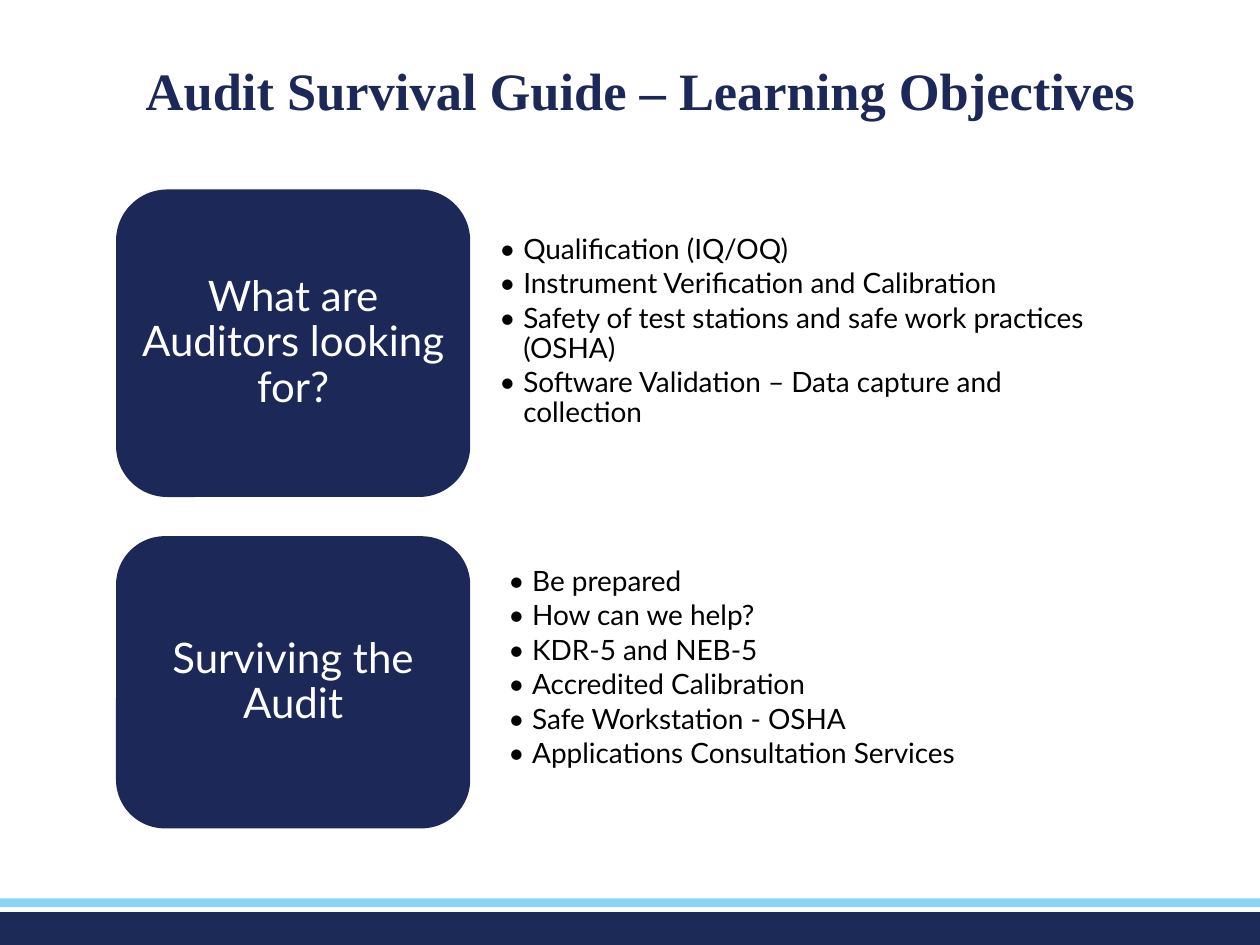
from dataclasses import dataclass

from lxml.etree import SubElement
from pptx import Presentation
from pptx.dml.color import RGBColor
from pptx.enum.shapes import MSO_SHAPE
from pptx.enum.text import MSO_ANCHOR, MSO_AUTO_SIZE, PP_ALIGN
from pptx.oxml.ns import qn
from pptx.util import Cm, Pt

NAVY = RGBColor(0x1C, 0x29, 0x58)
FOOTER_NAVY = RGBColor(0x1C, 0x2A, 0x58)
SKY = RGBColor(0x88, 0xD6, 0xF4)
WHITE = RGBColor(0xFF, 0xFF, 0xFF)
BLACK = RGBColor(0x00, 0x00, 0x00)

SLIDE_WIDTH, SLIDE_HEIGHT = 25.4, 19.05
CARD_LEFT, CARD_WIDTH = 2.34, 7.14
BULLET_INDENT = Cm(0.48)


@dataclass
class Box:
    """A rectangle in centimetres."""
    left: float
    top: float
    width: float
    height: float

    def lengths(self) -> tuple:
        return Cm(self.left), Cm(self.top), Cm(self.width), Cm(self.height)


@dataclass
class Topic:
    heading: str
    card: Box
    points: list[str]
    points_box: Box


TOPICS = [
    Topic(
        "What are Auditors looking for?",
        Box(CARD_LEFT, 3.82, CARD_WIDTH, 6.2),
        [
            "Qualification (IQ/OQ)",
            "Instrument Verification and Calibration",
            "Safety of test stations and safe work practices (OSHA)",
            "Software Validation – Data capture and collection",
        ],
        Box(9.77, 3.71, 12.98, 5.97),
    ),
    Topic(
        "Surviving the Audit",
        Box(CARD_LEFT, 10.81, CARD_WIDTH, 5.89),
        [
            "Be prepared",
            "How can we help?",
            "KDR-5 and NEB-5",
            "Accredited Calibration",
            "Safe Workstation - OSHA",
            "Applications Consultation Services",
        ],
        Box(9.95, 10.49, 13.18, 5.97),
    ),
]


def format_paragraph(paragraph, size: float, color: RGBColor, space_after: float = 0,
                     font_name: str = "Lato", bold: bool = False,
                     alignment=PP_ALIGN.CENTER) -> None:
    paragraph.alignment = alignment
    paragraph.line_spacing = 0.9
    paragraph.space_before = Pt(0)
    paragraph.space_after = Pt(space_after)
    font = paragraph.font
    font.name, font.size, font.bold = font_name, Pt(size), bold
    font.color.rgb = color


def set_frame(text_frame, left: float, other: float) -> None:
    text_frame.word_wrap = True
    text_frame.auto_size = MSO_AUTO_SIZE.NONE
    text_frame.vertical_anchor = MSO_ANCHOR.MIDDLE
    text_frame.margin_left = Cm(left)
    text_frame.margin_top = text_frame.margin_right = text_frame.margin_bottom = Cm(other)


def add_block(slide, preset, box: Box, color: RGBColor):
    shape = slide.shapes.add_shape(preset, *box.lengths())
    shape.shadow.inherit = False
    shape.fill.solid()
    shape.fill.fore_color.rgb = color
    shape.line.fill.background()
    return shape


def add_bullet(paragraph) -> None:
    properties = paragraph._p.get_or_add_pPr()
    properties.set("marL", str(BULLET_INDENT))
    properties.set("indent", str(-BULLET_INDENT))
    SubElement(properties, qn("a:buFont")).set("typeface", "Lato")
    SubElement(properties, qn("a:buChar")).set("char", "•")


def add_title(slide, text: str) -> None:
    title = slide.shapes.title
    title.left, title.top, title.width, title.height = Box(2.34, 0.84, 21.16, 2.11).lengths()
    set_frame(title.text_frame, 0.13, 0.13)
    title.text_frame.text = text
    format_paragraph(title.text_frame.paragraphs[0], 30, NAVY,
                     font_name="Times New Roman", bold=True)


def add_topic(slide, topic: Topic) -> None:
    # Heading card
    card = add_block(slide, MSO_SHAPE.ROUNDED_RECTANGLE, topic.card, NAVY)
    set_frame(card.text_frame, 0.05, 0.05)
    card.text_frame.text = topic.heading
    format_paragraph(card.text_frame.paragraphs[0], 24, WHITE, space_after=8.4)

    # Bulleted points beside it
    text_frame = slide.shapes.add_textbox(*topic.points_box.lengths()).text_frame
    set_frame(text_frame, 0.3, 0.03)
    text_frame.text = "\n".join(topic.points)
    for paragraph in text_frame.paragraphs:
        add_bullet(paragraph)
        format_paragraph(paragraph, 16, BLACK, space_after=2.4, alignment=PP_ALIGN.LEFT)


def main() -> None:
    presentation = Presentation()
    presentation.slide_width, presentation.slide_height = Cm(SLIDE_WIDTH), Cm(SLIDE_HEIGHT)
    slide = presentation.slides.add_slide(presentation.slide_layouts.get_by_name("Title Only"))

    # Footer bands
    add_block(slide, MSO_SHAPE.RECTANGLE, Box(0, 18.39, SLIDE_WIDTH, 0.66), FOOTER_NAVY)
    add_block(slide, MSO_SHAPE.RECTANGLE, Box(0, 18.11, SLIDE_WIDTH, 0.18), SKY)

    add_title(slide, "Audit Survival Guide – Learning Objectives")
    for topic in TOPICS:
        add_topic(slide, topic)

    presentation.save("out.pptx")


if __name__ == "__main__":
    main()
